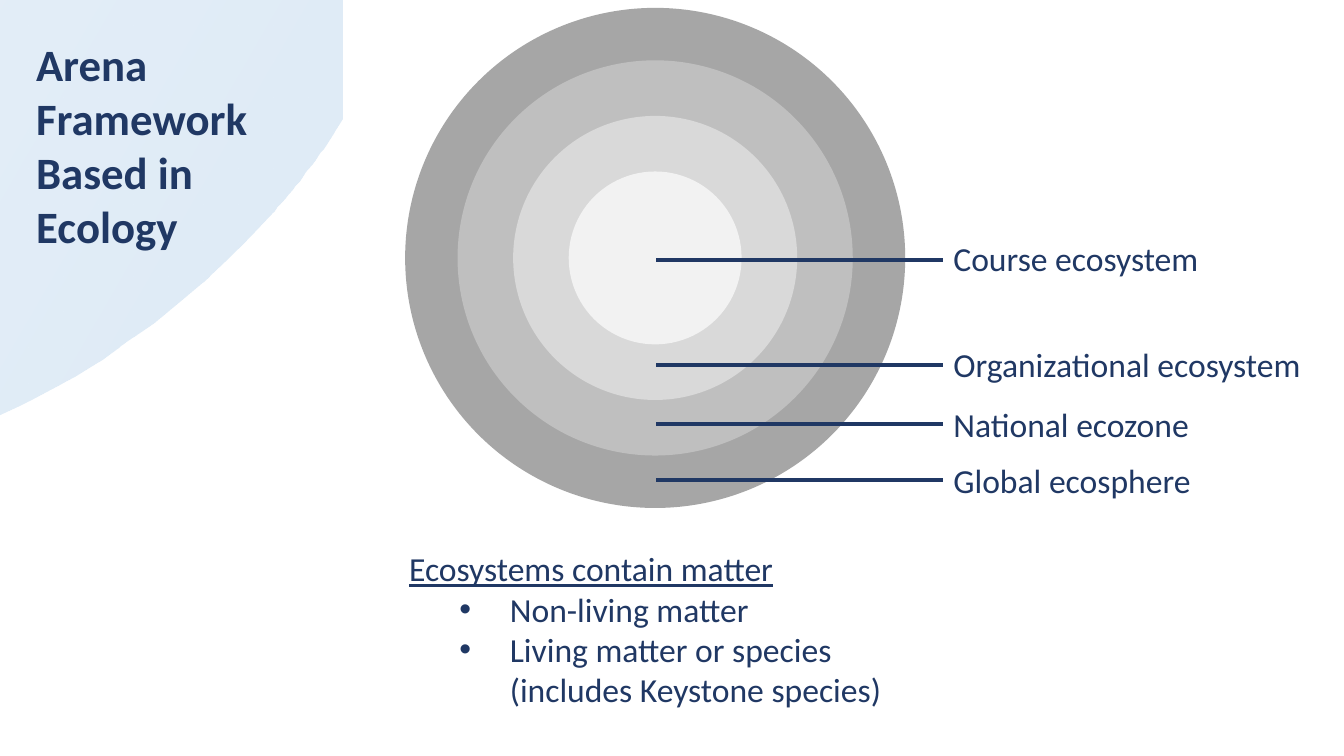
from lxml import etree
from pptx import Presentation
from pptx.dml.color import RGBColor
from pptx.enum.shapes import MSO_CONNECTOR, MSO_SHAPE
from pptx.oxml.ns import qn
from pptx.util import Pt

DONUT = MSO_SHAPE.DONUT
OVAL = MSO_SHAPE.OVAL
STRAIGHT = MSO_CONNECTOR.STRAIGHT

FONT = "Calibri"
COLORS = {
    "ink": "203864",
    "corner": "DEEBF7",
    "global": "A6A6A6",
    "national": "BFBFBF",
    "organization": "D9D9D9",
    "course": "F2F2F2",
}
CENTER_X, CENTER_Y = 468, 184.25
CORE_DIAMETER = 119
RING_WIDTH = 39.7
LABEL_LEFT = 673.9
LEVELS = [
    ("Course ecosystem", 185.8, 166.3, 224),
    ("Organizational ecosystem", 260.6, 241.9, 276.5),
    ("National ecozone", 303.1, 285.1, 184),
    ("Global ecosphere", 342.7, 324.7, 209),
]


def color(name):
    return RGBColor.from_string(COLORS[name])


def curve(start, control_a, control_b, end, steps=16):
    points = []
    for step in range(1, steps + 1):
        t = step / steps
        weights = ((1 - t) ** 3, 3 * t * (1 - t) ** 2, 3 * t * t * (1 - t), t ** 3)
        anchors = (start, control_a, control_b, end)
        points.append(tuple(
            sum(weight * anchor[axis] for weight, anchor in zip(weights, anchors))
            for axis in (0, 1)))
    return points


def add_corner(slide):
    bend, middle, foot = (233.3, 103.7), (195.8, 151.2), (-92.2, 324)
    outline = [(244.8, -159.8), (244.8, 85), bend]
    outline += curve(bend, (222.5, 118.8), (210.2, 134.6), middle)
    outline += curve(middle, (113, 244.8), (-4.3, 313.2), foot)
    outline.append((-104.4, 325.4))
    builder = slide.shapes.build_freeform(-104.4, -159.8, scale=Pt(1))
    builder.add_line_segments(outline, close=True)
    corner = builder.convert_to_shape()
    corner.shadow.inherit = False
    corner.line.fill.background()
    corner.fill.gradient()
    corner.fill.gradient_angle = 330
    for stop in corner.fill.gradient_stops:
        stop.color.rgb = color("corner")
    first_stop = next(corner._element.spPr.iter(qn("a:srgbClr")))
    etree.SubElement(first_stop, qn("a:alpha"), val="75000")


def add_circle(slide, kind, diameter, fill, outlined=True):
    circle = slide.shapes.add_shape(
        kind, Pt(CENTER_X - diameter / 2), Pt(CENTER_Y - diameter / 2),
        Pt(diameter), Pt(diameter))
    circle.shadow.inherit = False
    circle.fill.solid()
    circle.fill.fore_color.rgb = color(fill)
    if outlined:
        circle.line.color.rgb = color(fill)
        circle.line.width = Pt(4.5)
    else:
        circle.line.fill.background()
    return circle


def add_rings(slide):
    for order, level in ((3, "global"), (2, "national"), (1, "organization")):
        diameter = CORE_DIAMETER + 2 * RING_WIDTH * order
        ring = add_circle(slide, DONUT, diameter, level, level != "global")
        ring.adjustments[0] = RING_WIDTH / diameter
    add_circle(slide, OVAL, CORE_DIAMETER, "course")


def style(paragraph, size=24, bold=None, underline=None):
    font = paragraph.font
    font.name = FONT
    font.size = Pt(size)
    font.bold = bold
    font.underline = underline
    font.color.rgb = color("ink")


def add_text(slide, left, top, width, height, lines, **look):
    frame = slide.shapes.add_textbox(Pt(left), Pt(top), Pt(width), Pt(height)).text_frame
    frame.word_wrap = True
    frame.text = "\n".join(lines)
    for paragraph in frame.paragraphs:
        style(paragraph, **look)
    return frame


def add_item(frame, text, margin, hanging=0, bullet=None):
    item = frame.add_paragraph()
    item.text = text
    item.level = 1
    properties = item._p.get_or_add_pPr()
    properties.set("marL", str(Pt(margin)))
    properties.set("indent", str(-Pt(hanging)))
    if bullet:
        etree.SubElement(properties, qn("a:buFont"), typeface="Arial")
        etree.SubElement(properties, qn("a:buChar"), char=bullet)
    style(item)


def add_pointer(slide, y):
    pointer = slide.shapes.add_connector(STRAIGHT, Pt(468.7), Pt(y), Pt(LABEL_LEFT), Pt(y))
    pointer.line.color.rgb = color("ink")
    pointer.line.width = Pt(3)
    etree.SubElement(pointer._element.spPr, qn("a:effectLst"))


def main():
    deck = Presentation()
    deck.slide_width, deck.slide_height = Pt(960), Pt(540)
    slide = deck.slides.add_slide(deck.slide_layouts[6])
    add_corner(slide)
    add_text(slide, 18.7, 23, 243.4, 162.7,
             ["Arena Framework Based in", "Ecology"], size=32, bold=True)
    add_rings(slide)
    for label, _, top, width in LEVELS:
        add_text(slide, LABEL_LEFT, top, width, 36, [label])
    matter = add_text(slide, 285.1, 388.1, 365.8, 157.7,
                      ["Ecosystems contain matter"], underline=True)
    add_item(matter, "Non-living matter", 72, 36, "•")
    add_item(matter, "Living matter or species", 72, 36, "•")
    add_item(matter, "\t(includes Keystone species)", 36)
    for _, y, _, _ in LEVELS:
        add_pointer(slide, y)
    deck.save("out.pptx")


if __name__ == "__main__":
    main()
